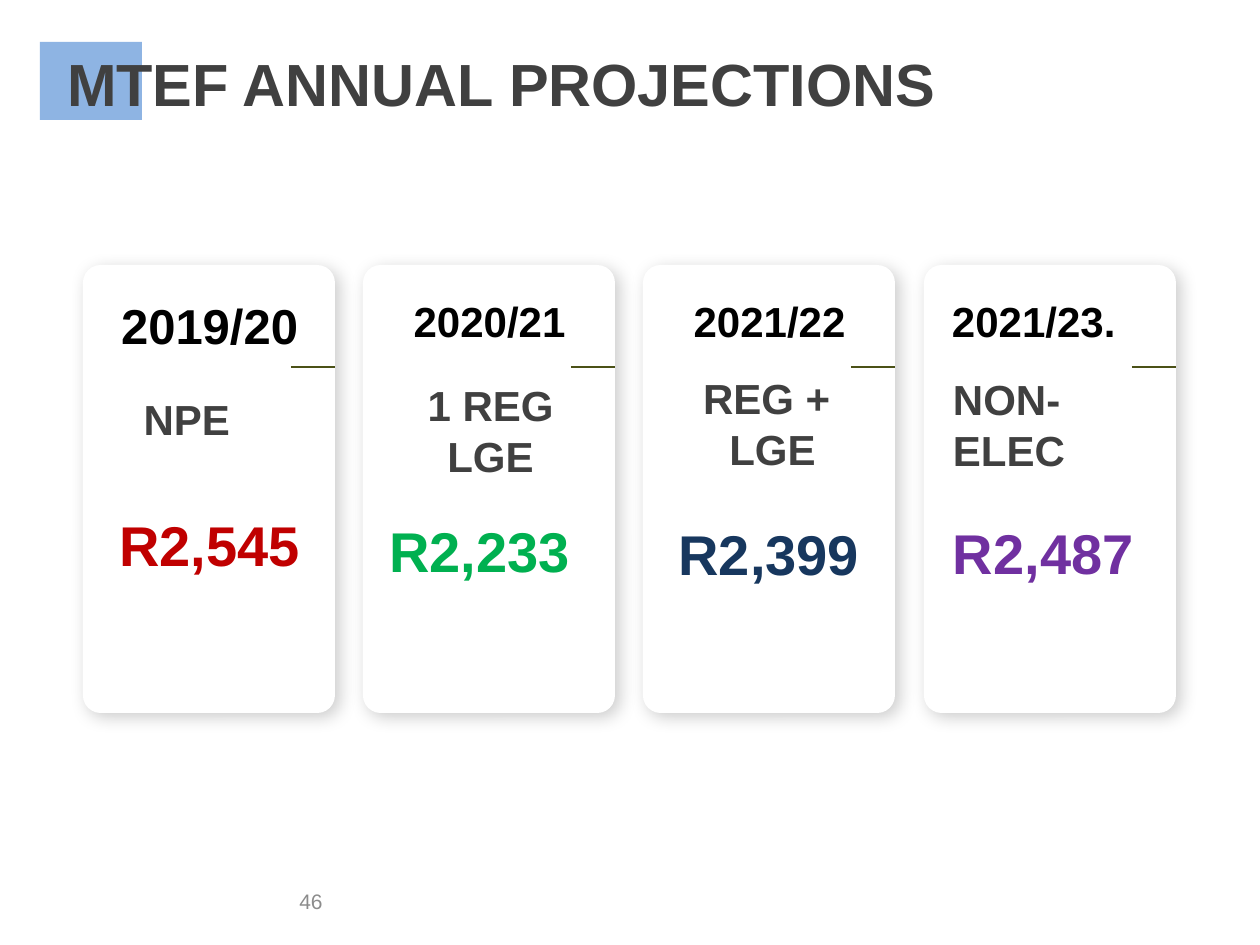
from lxml import etree
from pptx import Presentation
from pptx import util as u
from pptx.dml.color import RGBColor
from pptx.enum import shapes, text
from pptx.oxml import parse_xml
from pptx.oxml.ns import nsdecls, qn

PX = u.Inches(1) / 126
THEME = {
    "font": "Arial", "title": 34, "figure": 32, "first_year": 28, "label": 24, "page": 12,
    "accent": "8EB4E3", "card": "FFFFFF", "ink": "404040", "year": "000000",
    "rule": "4B5117", "muted": "8C8C8C",
}
LEFT, CENTER, RIGHT = text.PP_ALIGN.LEFT, text.PP_ALIGN.CENTER, text.PP_ALIGN.RIGHT
SHADOW = (
    f'<a:effectLst {nsdecls("a")}><a:outerShdw blurRad="127000" dist="38100" dir="2700000" '
    'algn="tl" rotWithShape="0"><a:srgbClr val="000000"><a:alpha val="20000"/></a:srgbClr>'
    '</a:outerShdw></a:effectLst>'
)


def px(*lengths):
    return [round(length * PX) for length in lengths]


def write(holder, lines, size, color, align=LEFT, bold=True, **frame_format):
    frame = holder.text_frame
    frame.text = lines
    margins = dict(zip(("margin_left", "margin_top", "margin_right", "margin_bottom"), px(0, 6, 0, 6)))
    settings = {"word_wrap": True, "vertical_anchor": text.MSO_ANCHOR.TOP, **margins, **frame_format}
    for key, value in settings.items():
        setattr(frame, key, value)
    for paragraph in frame.paragraphs:
        paragraph.alignment = align
        font = paragraph.runs[0].font
        for key, value in {"name": THEME["font"], "size": u.Pt(THEME[size]), "bold": bold}.items():
            setattr(font, key, value)
        font.color.rgb = RGBColor.from_string(color)


prs = Presentation()
prs.slide_width, prs.slide_height = px(1260, 945)
slide = prs.slides.add_slide(prs.slide_layouts[6])
parts = slide.shapes

accent = parts.add_shape(shapes.MSO_SHAPE.RECTANGLE, *px(40, 42, 102, 78))
accent.shadow.inherit = False
accent.fill.solid()
accent.fill.fore_color.rgb = RGBColor.from_string(THEME["accent"])
accent.line.fill.background()

title = parts.add_textbox(*px(67, 47, 963, 72))
write(title, "MTEF ANNUAL PROJECTIONS", "title", THEME["ink"], margin_top=0, margin_bottom=0)

years = [
    ("2019/20", "first_year", CENTER, "NPE ", CENTER, (94, 388), "R2,545", "C00000", CENTER, (111, 504)),
    ("2020/21", "label", CENTER, "1 REG LGE", CENTER, (392, 374), "R2,233", "00B050", LEFT, (389, 510)),
    ("2021/22", "label", CENTER, "REG + \nLGE", CENTER, (674, 367), "R2,399", "17375E", CENTER, None),
    ("2021/23.", "label", LEFT, "NON-ELEC", LEFT, (953, 368), "R2,487", "7030A0", LEFT, (953, 513)),
]
CARD_TOP, CARD_WIDTH, CARD_HEIGHT, TEXT_WIDTH = 265, 252, 448, 197

for i, (year, year_size, year_align, election, election_align, election_at,
        amount, amount_color, amount_align, amount_at) in enumerate(years):
    card_left = 83 + i * 841 // 3
    card = parts.add_shape(shapes.MSO_SHAPE.ROUNDED_RECTANGLE,
                           *px(card_left, CARD_TOP, CARD_WIDTH, CARD_HEIGHT))
    card.adjustments[0] = 0.07
    card.fill.solid()
    card.fill.fore_color.rgb = RGBColor.from_string(THEME["card"])
    card.line.fill.background()
    card._element.spPr.append(parse_xml(SHADOW))

    heading = parts.add_textbox(*px(card_left + 28, 290, TEXT_WIDTH, 63))
    write(heading, year, year_size, THEME["year"], year_align)

    event = parts.add_textbox(*px(*election_at, TEXT_WIDTH, 63))
    write(event, election, "label", THEME["ink"], election_align)

    if amount_at:
        figure = parts.add_textbox(*px(*amount_at, TEXT_WIDTH, 81))
        write(figure, amount, "figure", amount_color, amount_align)
    else:
        write(card, amount, "figure", amount_color, amount_align,
              vertical_anchor=text.MSO_ANCHOR.MIDDLE, margin_top=px(134)[0])

    card_right = card_left + CARD_WIDTH
    rule = parts.add_connector(shapes.MSO_CONNECTOR.STRAIGHT, *px(card_right - 44, 367, card_right, 367))
    rule.line.color.rgb = RGBColor.from_string(THEME["rule"])
    rule.line.width = u.Pt(0.75)
    etree.SubElement(rule._element.spPr, qn("a:effectLst"))

page = parts.add_textbox(*px(42, 876, 293, 50))
write(page, "46", "page", THEME["muted"], RIGHT, False,
      vertical_anchor=text.MSO_ANCHOR.MIDDLE, margin_right=u.Inches(0.1))

prs.save("out.pptx")
